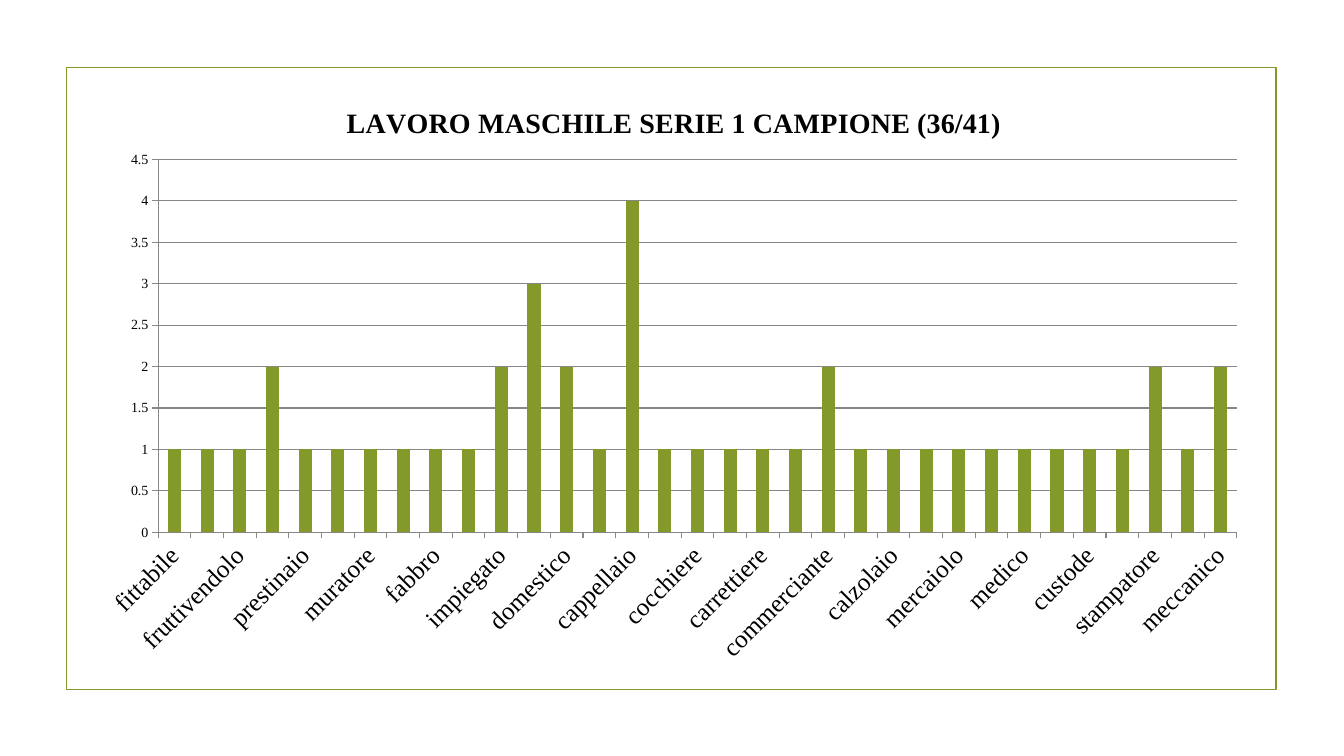
from lxml import etree
from pptx import Presentation
from pptx.chart import data as chart_data
from pptx.dml import color
from pptx.enum import chart as chart_enum, shapes
from pptx.oxml import ns
from pptx.util import Inches, Pt

COLORS = {"green": "83992A", "text": "000000", "grid": "878787"}
FONT = "Times New Roman"
TITLE = "LAVORO MASCHILE SERIE 1 CAMPIONE (36/41)"
JOBS = """fittabile militare fruttivendolo contabile prestinaio cartonaio
muratore orefice fabbro filatore impiegato sarto domestico macchinista
cappellaio tappezziere cocchiere pellettiere carrettiere tessitore
commerciante maestro calzolaio ebanista mercaiolo parrucchiere medico
venditore custode gioielliere stampatore facchino meccanico""".split()
COUNTS = {"contabile": 2, "impiegato": 2, "sarto": 3, "domestico": 2,
          "cappellaio": 4, "commerciante": 2, "stampatore": 2, "meccanico": 2}
PLOT_AREA = {"x": 0.06, "y": 0.13, "w": 0.92, "h": 0.63}


def rgb(name):
    return color.RGBColor.from_string(COLORS[name])


def set_attributes(target, values):
    for name, value in values.items():
        setattr(target, name, value)


def style_font(font, size, bold=False):
    set_attributes(font, {"name": FONT, "size": Pt(size), "bold": bold})
    font.color.rgb = rgb("text")


def style_line(line, name, width):
    line.color.rgb = rgb(name)
    line.width = Pt(width)


def add_frame(slide):
    frame = slide.shapes.add_shape(
        shapes.MSO_SHAPE.RECTANGLE,
        Inches(0.66), Inches(0.67), Inches(12), Inches(6.17))
    frame.shadow.inherit = False
    frame.fill.background()
    style_line(frame.line, "green", 1.25)


def place_plot(chart):
    plot_area = chart._chartSpace.chart.plotArea
    for old_layout in plot_area.findall(ns.qn("c:layout")):
        plot_area.remove(old_layout)
    layout = etree.Element(ns.qn("c:layout"))
    manual = etree.SubElement(layout, ns.qn("c:manualLayout"))
    settings = {"layoutTarget": "inner", "xMode": "edge", "yMode": "edge", **PLOT_AREA}
    for name, value in settings.items():
        etree.SubElement(manual, ns.qn(f"c:{name}")).set("val", str(value))
    plot_area.insert(0, layout)


def style_axis(axis, size):
    set_attributes(axis, {"major_tick_mark": chart_enum.XL_TICK_MARK.OUTSIDE,
                          "minor_tick_mark": chart_enum.XL_TICK_MARK.NONE})
    style_line(axis.format.line, "grid", 0.75)
    style_font(axis.tick_labels.font, size)


def add_jobs_chart(slide):
    data = chart_data.CategoryChartData()
    data.categories = JOBS
    data.add_series("Series 1", [COUNTS.get(job, 1) for job in JOBS])
    chart = slide.shapes.add_chart(
        chart_enum.XL_CHART_TYPE.COLUMN_STACKED,
        Inches(0.87), Inches(0.82), Inches(11.63), Inches(5.87), data).chart
    style_font(chart.font, 10)
    chart.has_legend = False
    chart.has_title = True
    title_frame = chart.chart_title.text_frame
    title_frame.text = TITLE
    style_font(title_frame.paragraphs[0].runs[0].font, 20, True)

    plot = chart.plots[0]
    set_attributes(plot, {"gap_width": 150, "overlap": 100,
                          "vary_by_categories": False})
    fill = plot.series[0].format.fill
    fill.solid()
    fill.fore_color.rgb = rgb("green")

    style_axis(chart.category_axis, 18)
    chart.category_axis._element.txPr.bodyPr.set("rot", "-2700000")
    value_axis = chart.value_axis
    style_axis(value_axis, 10)
    set_attributes(value_axis, {"minimum_scale": 0, "maximum_scale": 4.5,
                                "major_unit": 0.5, "has_major_gridlines": True})
    style_line(value_axis.major_gridlines.format.line, "grid", 0.75)
    place_plot(chart)


def main():
    presentation = Presentation()
    set_attributes(presentation, {"slide_width": Inches(13.33),
                                  "slide_height": Inches(7.5)})
    slide = presentation.slides.add_slide(presentation.slide_layouts[6])
    add_frame(slide)
    add_jobs_chart(slide)
    presentation.save("out.pptx")


if __name__ == "__main__":
    main()
